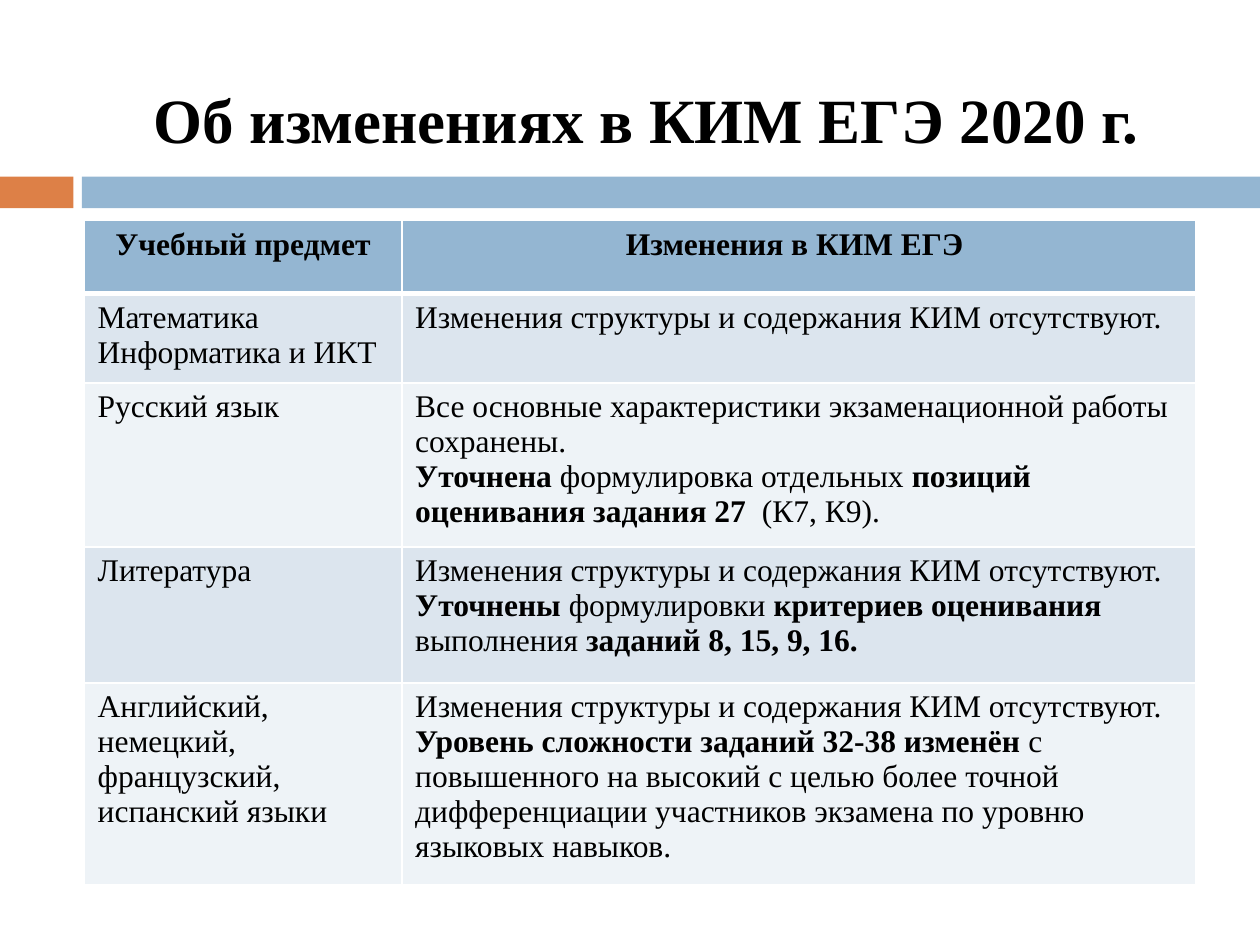
from lxml import etree
from pptx import Presentation
from pptx import util as u
from pptx.dml.color import RGBColor
from pptx.enum import shapes, text
from pptx.oxml.ns import qn

# Content: asterisks enclose bold words, each string is a paragraph
TITLE = "*Об изменениях в КИМ ЕГЭ 2020 г.*"
UNCHANGED = "Изменения структуры и содержания КИМ отсутствуют."
ROWS = [
    (["*Учебный предмет*"], ["*Изменения в КИМ ЕГЭ *"]),
    (["Математика", "Информатика и ИКТ"], [UNCHANGED]),
    (["Русский язык"],
     ["Все основные характеристики экзаменационной работы сохранены.",
      "*Уточнена* формулировка отдельных *позиций оценивания задания 27  *(К7, К9)."]),
    (["Литература"],
     [UNCHANGED,
      "*Уточнены* формулировки *критериев оценивания *выполнения *заданий 8, 15, 9, 16.*"]),
    (["Английский, немецкий, французский, испанский языки"],
     [UNCHANGED,
      "*Уровень сложности заданий 32-38 изменён *с повышенного на высокий с целью "
      "более точной дифференциации участников экзамена по уровню языковых навыков."]),
]
COLUMN_WIDTHS = [6.4, 16]
ROW_HEIGHTS = [1.47, 1.8, 3.07, 2.74, 3.76]

FONT = "Times New Roman"
BLACK = RGBColor(0x00, 0x00, 0x00)
WHITE = RGBColor(0xFF, 0xFF, 0xFF)
ORANGE = RGBColor(0xDD, 0x80, 0x47)
BLUE = RGBColor(0x94, 0xB6, 0xD2)
BANDS = [RGBColor(0xEE, 0xF3, 0xF7), RGBColor(0xDC, 0xE5, 0xEE)]


def write_text(frame, paragraphs, size=18, color=BLACK, align=text.PP_ALIGN.LEFT):
    frame.word_wrap = True
    for index, content in enumerate(paragraphs):
        paragraph = frame.paragraphs[0] if index == 0 else frame.add_paragraph()
        paragraph.alignment = align
        for part, words in enumerate(content.split("*")):
            if words:
                run = paragraph.add_run()
                run.text = words
                run.font.name = FONT
                run.font.size = u.Pt(size)
                run.font.bold = part % 2 == 1
                run.font.color.rgb = color


def add_bar(slide, left, width, color):
    bar = slide.shapes.add_shape(shapes.MSO_SHAPE.RECTANGLE, u.Cm(left), u.Cm(3.56),
                                 u.Cm(width), u.Cm(0.64))
    bar.shadow.inherit = False
    bar.fill.solid()
    bar.fill.fore_color.rgb = color
    bar.line.fill.background()


def set_borders(cell, bottom):
    properties = cell._tc.get_or_add_tcPr()
    widths = {"a:lnL": 1, "a:lnR": 1, "a:lnT": 1, "a:lnB": bottom}
    for position, (tag, width) in enumerate(widths.items()):
        line = etree.Element(qn(tag), w=str(u.Pt(width)))
        fill = etree.SubElement(line, qn("a:solidFill"))
        etree.SubElement(fill, qn("a:srgbClr"), val=str(WHITE))
        properties.insert(position, line)


def add_subject_table(slide):
    table = slide.shapes.add_table(
        len(ROWS), len(COLUMN_WIDTHS), u.Cm(1.7), u.Cm(4.45),
        u.Cm(sum(COLUMN_WIDTHS)), u.Cm(sum(ROW_HEIGHTS))).table
    for column, width in zip(table.columns, COLUMN_WIDTHS):
        column.width = u.Cm(width)
    for index, (row, height, contents) in enumerate(zip(table.rows, ROW_HEIGHTS, ROWS)):
        row.height = u.Cm(height)
        header = index == 0
        for cell, paragraphs in zip(row.cells, contents):
            cell.margin_left = cell.margin_right = u.Cm(0.27)
            cell.margin_top = cell.margin_bottom = u.Cm(0.13)
            cell.fill.solid()
            cell.fill.fore_color.rgb = BLUE if header else BANDS[index % 2]
            set_borders(cell, bottom=3 if header else 1)
            write_text(cell.text_frame, paragraphs,
                       align=text.PP_ALIGN.CENTER if header else text.PP_ALIGN.LEFT)


def main():
    presentation = Presentation()
    presentation.slide_width, presentation.slide_height = u.Cm(25.4), u.Cm(19.05)
    slide = presentation.slides.add_slide(presentation.slide_layouts[6])

    # Divider bars
    add_bar(slide, 0, 1.48, ORANGE)
    add_bar(slide, 1.65, 23.75, BLUE)

    # Title
    title = slide.shapes.add_textbox(u.Cm(1.7), u.Cm(1.12), u.Cm(22.66), u.Cm(2.26))
    title.text_frame.vertical_anchor = text.MSO_ANCHOR.MIDDLE
    title.text_frame.margin_top = u.Cm(0.4)
    write_text(title.text_frame, [TITLE], size=36, align=text.PP_ALIGN.CENTER)

    # Subjects and their changes
    add_subject_table(slide)
    presentation.save("out.pptx")


if __name__ == "__main__":
    main()
